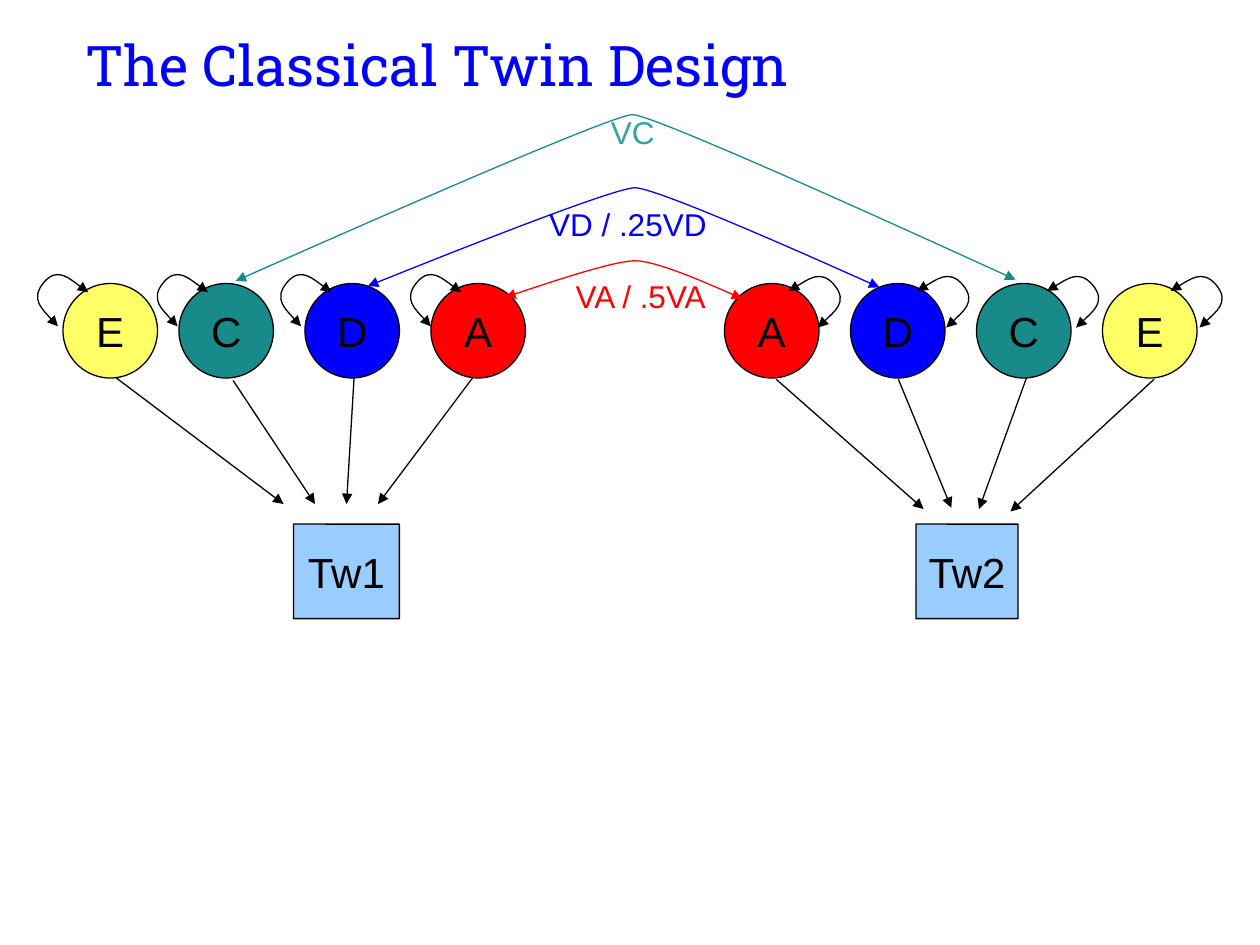
import pptx
import pptx.util
import pptx.dml.color
import pptx.enum.shapes
import pptx.enum.text
import pptx.oxml
import pptx.oxml.ns

Inches = pptx.util.Inches
Shapes = pptx.enum.shapes.MSO_SHAPE
Anchor = pptx.enum.text.MSO_ANCHOR
Align = pptx.enum.text.PP_ALIGN
qn = pptx.oxml.ns.qn

BLACK, RED, BLUE, TEAL = "000000", "FF0000", "0000FF", "198A8A"
YELLOW, LIGHT_BLUE, LIGHT_TEAL = "FFFF66", "99CCFF", "33A3A3"


def colour(code):
    return pptx.dml.color.RGBColor.from_string(code)


class PathDiagram:
    """Holds the shared style and the slide being drawn."""

    font = "Arial"
    line_width = pptx.util.Pt(0.75)

    def __init__(self, slide):
        self.slide = slide
        self.shapes = slide.shapes

    def label(self, shape, text, size, code, font=None):
        frame = shape.text_frame
        frame.word_wrap = True
        frame.text = text
        span = frame.paragraphs[0].runs[0]
        span.font.size = pptx.util.Pt(size)
        span.font.name = font or self.font
        span.font.color.rgb = colour(code)
        return frame

    def outline(self, shape, code, *arrow_ends):
        shape.line.color.rgb = colour(code)
        shape.line.width = self.line_width
        line = shape.line._get_or_add_ln()
        for end in arrow_ends:
            line.append(pptx.oxml.parse_xml(
                f'<a:{end} {pptx.oxml.ns.nsdecls("a")} type="triangle"/>'))

    def text(self, text, left, top, width, height, size, code, font=None):
        box = self.shapes.add_textbox(*map(Inches, (left, top, width, height)))
        return self.label(box, text, size, code, font)

    def node(self, kind, text, left, top, width, height, fill):
        shape = self.shapes.add_shape(
            kind, *map(Inches, (left, top, width, height)))
        shape.shadow.inherit = False
        shape.fill.solid()
        shape.fill.fore_color.rgb = colour(fill)
        self.outline(shape, BLACK)
        frame = self.label(shape, text, 24, BLACK)
        frame.vertical_anchor = Anchor.MIDDLE
        frame.paragraphs[0].alignment = Align.CENTER
        return shape

    def arrow(self, start, end):
        line = self.shapes.add_connector(
            pptx.enum.shapes.MSO_CONNECTOR.STRAIGHT,
            *map(Inches, (*start, *end)))
        self.outline(line, BLACK, "tailEnd")
        line._element.spPr.append(pptx.oxml.parse_xml(
            f'<a:effectLst {pptx.oxml.ns.nsdecls("a")}/>'))

    def curve(self, start, before, middle, after, end, code):
        """Double-headed arrow of two Bezier pieces that meet at middle."""
        points = [start, before, middle, after, end, end]
        builder = self.shapes.build_freeform(*map(Inches, start))
        builder.add_line_segments(
            [tuple(map(Inches, point)) for point in points], close=False)
        shape = builder.convert_to_shape()
        shape.shadow.inherit = False
        shape.fill.background()
        self.outline(shape, code, "headEnd", "tailEnd")

        # Turn each three line segments into one cubic piece
        outline_path = next(shape._element.iter(qn("a:path")))
        segments = outline_path.findall(qn("a:lnTo"))
        for first in range(0, len(segments), 3):
            piece = pptx.oxml.parse_xml(
                f'<a:cubicBezTo {pptx.oxml.ns.nsdecls("a")}/>')
            for segment in segments[first:first + 3]:
                piece.append(segment[0])
                outline_path.remove(segment)
            outline_path.append(piece)


def main():
    deck = pptx.Presentation()
    deck.slide_width, deck.slide_height = Inches(10), Inches(7.5)
    diagram = PathDiagram(deck.slides.add_slide(deck.slide_layouts[6]))

    # Title
    title = diagram.text("The Classical Twin Design", 0.58, 0.17, 8.92, 0.67,
                         32, BLUE, "Roboto Slab")
    title.vertical_anchor = Anchor.BOTTOM
    title.margin_top = Inches(0.06)
    title.paragraphs[0].line_spacing = 0.98

    # Observed twins
    for name, left, width in (("Tw1", 2.33, 0.84), ("Tw2", 7.27, 0.81)):
        twin = diagram.node(Shapes.ROUNDED_RECTANGLE, name,
                            left, 4.16, width, 0.75, LIGHT_BLUE)
        twin.adjustments[0] = 0.002

    # Paths from the factors to the twins
    for start, end in (
            ((3.75, 3), (3, 4)), ((2.81, 3), (2.75, 4)),
            ((1.85, 3.02), (2.5, 4)), ((0.91, 2.99), (2.25, 4)),
            ((6.16, 3.01), (7.33, 4.04)), ((7.13, 3.01), (7.55, 4.03)),
            ((8.15, 2.99), (7.77, 4.04)), ((9.16, 3.01), (8.02, 4.06))):
        diagram.arrow(start, end)

    # Latent factors
    fills = {"E": YELLOW, "C": TEAL, "D": BLUE, "A": RED}
    for lefts in ((0.5, 1.42, 2.42, 3.42), (8.75, 7.75, 6.75, 5.75)):
        for (name, fill), left in zip(fills.items(), lefts):
            diagram.node(Shapes.OVAL, name, left, 2.25, 0.75, 0.75, fill)

    # Variance loops, measured from the left edge of each loop
    left_loop = ((0.47, 2.32), (0.23, 2.11), (0.12, 2.24),
                 (0, 2.38), (0.23, 2.59))
    right_loop = ((0.23, 2.6), (0.48, 2.4), (0.36, 2.26),
                  (0.25, 2.13), (0, 2.31))
    for loop, lefts in ((left_loop, (0.23, 1.18, 2.16, 3.19)),
                        (right_loop, (6.26, 7.28, 8.31, 9.29))):
        for left in lefts:
            diagram.curve(*((left + x, y) for x, y in loop), BLACK)

    # Covariances between the twins' factors
    for right, peak, left, code in (
            ((5.89, 2.37), (5.04, 2.07), (4.01, 2.36), RED),
            ((6.98, 2.28), (5.04, 1.49), (2.92, 2.27), BLUE),
            ((8.06, 2.22), (5.02, 0.91), (1.87, 2.23), TEAL)):
        x, y = peak
        diagram.curve(right, (x + 0.18, y), peak, (x - 0.18, y), left, code)

    # Covariance labels
    diagram.text("VA / .5VA", 4.47, 2.15, 1.32, 0.45, 18, RED)
    diagram.text("VD / .25VD", 4.26, 1.58, 1.57, 0.4, 18, BLUE)
    diagram.text("VC", 4.75, 0.85, 0.56, 0.4, 18, LIGHT_TEAL)

    deck.save("out.pptx")


if __name__ == "__main__":
    main()
